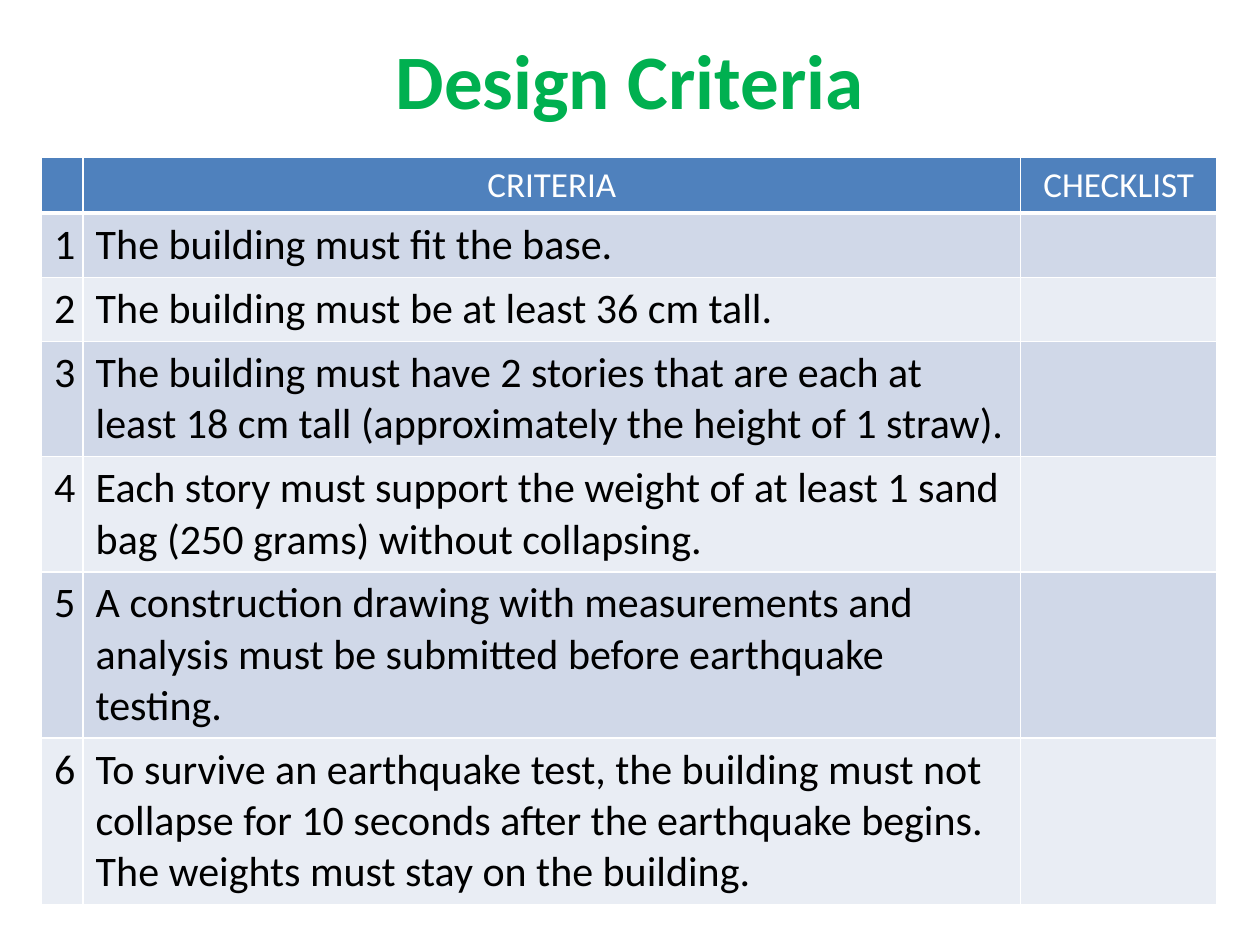
import pptx
import pptx.dml.color
import pptx.enum.text
import pptx.oxml
import pptx.oxml.ns
import pptx.util

Inches = pptx.util.Inches
Pt = pptx.util.Pt
ALIGN = pptx.enum.text.PP_ALIGN
ANCHOR = pptx.enum.text.MSO_ANCHOR

CRITERIA = [
    "The building must fit the base.",
    "The building must be at least 36 cm tall.",
    "The building must have 2 stories that are each at least 18 cm tall "
    "(approximately the height of 1 straw).",
    "Each story must support the weight of at least 1 sand bag (250 grams) "
    "without collapsing.",
    "A construction drawing with measurements and analysis must be submitted "
    "before earthquake testing.",
    "To survive an earthquake test, the building must not collapse for "
    "10 seconds after the earthquake begins. The weights must stay on the building.",
]
HEADER = ["", "CRITERIA", "CHECKLIST"]
COLUMN_WIDTHS = [0.33, 7.44, 1.56]
ROW_HEIGHTS = [0.44, 0.51, 0.51, 0.91, 0.91, 1.32, 1.32]


def color(value):
    return pptx.dml.color.RGBColor.from_string(value)


def write_text(frame, text, size=24, fill="000000", bold=False, align=ALIGN.LEFT):
    paragraph = frame.paragraphs[0]
    paragraph.alignment = align
    run = paragraph.add_run()
    run.text = text
    run.font.name = "Calibri"
    run.font.size = Pt(size)
    run.font.bold = bold
    run.font.color.rgb = color(fill)


class CriteriaSlide:
    title_color = "00B050"
    header_fill = "4F81BD"
    band_fills = ["D0D8E8", "E9EDF4"]
    border_color = "FFFFFF"

    def __init__(self, presentation):
        self.slide = presentation.slides.add_slide(presentation.slide_layouts[5])

    def add_title(self, text, left, top, width, height):
        title = self.slide.shapes.title
        title.left, title.top = Inches(left), Inches(top)
        title.width, title.height = Inches(width), Inches(height)
        title.text_frame.vertical_anchor = ANCHOR.MIDDLE
        write_text(title.text_frame, text, size=44, fill=self.title_color,
                   bold=True, align=ALIGN.CENTER)

    def style_cell(self, cell, fill, bottom_width=1):
        # Borders must come before the fill in the cell properties
        properties = cell._tc.get_or_add_tcPr()
        for side, width in (("L", 1), ("R", 1), ("T", 1), ("B", bottom_width)):
            properties.append(pptx.oxml.parse_xml(
                f'<a:ln{side} {pptx.oxml.ns.nsdecls("a")} w="{Pt(width)}">'
                f'<a:solidFill><a:srgbClr val="{self.border_color}"/></a:solidFill>'
                f'</a:ln{side}>'))
        cell.fill.solid()
        cell.fill.fore_color.rgb = color(fill)

    def add_table(self, header, rows, left, top, widths, heights):
        frame = self.slide.shapes.add_table(
            len(rows) + 1, len(header), Inches(left), Inches(top),
            Inches(sum(widths)), Inches(sum(heights)))
        table = frame.table
        for column, width in zip(table.columns, widths):
            column.width = Inches(width)
        for row, height in zip(table.rows, heights):
            row.height = Inches(height)

        # Header row
        for cell, text in zip(table.rows[0].cells, header):
            self.style_cell(cell, self.header_fill, bottom_width=3)
            if text:
                write_text(cell.text_frame, text, size=20, fill="FFFFFF",
                           align=ALIGN.CENTER)

        # Banded body rows
        for index, values in enumerate(rows):
            for cell, text in zip(table.rows[index + 1].cells, values):
                self.style_cell(cell, self.band_fills[index % 2])
                if text:
                    write_text(cell.text_frame, text)


def main():
    presentation = pptx.Presentation()
    presentation.slide_width = Inches(10)
    presentation.slide_height = Inches(7.5)

    page = CriteriaSlide(presentation)
    page.add_title("Design Criteria", 0.5, 0, 9, 1.25)
    rows = [[str(number), text, ""] for number, text in enumerate(CRITERIA, 1)]
    page.add_table(HEADER, rows, 0.33, 1.25, COLUMN_WIDTHS, ROW_HEIGHTS)

    presentation.save("out.pptx")


if __name__ == "__main__":
    main()
